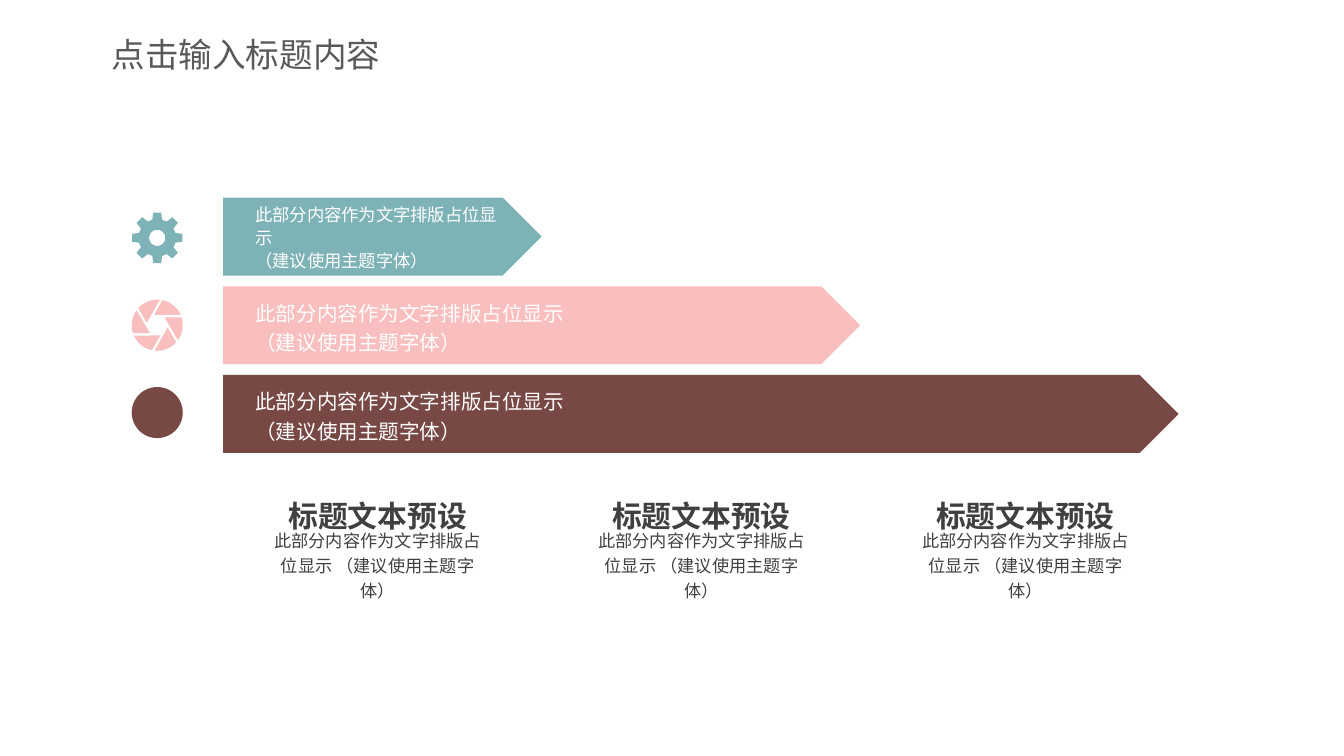
from math import cos, sin, radians
from pptx import Presentation
from pptx.dml.color import RGBColor
from pptx.enum.shapes import MSO_SHAPE as Shape
from pptx.enum.text import MSO_ANCHOR as Anchor, MSO_AUTO_SIZE as Auto, PP_ALIGN as Align
from pptx.util import Inches, Pt

TITLE = "点击输入标题内容"
BAR = "此部分内容作为文字排版占位显示 \n（建议使用主题字体）"
BARS = [("7DB2B7", 9.3, 1.1), ("F8BFBE", 11, 1.2), ("784845", 11, 1.2)]
NOTES = [("标题文本预设", "此部分内容作为文字排版占位显示 （建议使用主题字体）")] * 3

WIDE = 10
LEFT, TOP, STEP, HIGH, UNIT = 1.66, 1.47, 0.66, 0.58, 2.37
MID, ICON_TOP, ICON_STEP, RAD = 1.17, 1.77, 0.65, 0.19
NOTE_LEFT, NOTE_STEP, NOTE_WIDE = 2, 2.41, 1.62


def box(x, y, w, h):
    return [Inches(v) for v in (x, y, w, h)]


def paint(shape, color):
    shape.shadow.inherit = False
    shape.fill.solid()
    shape.fill.fore_color.rgb = RGBColor.from_string(color)
    shape.line.fill.background()


def write(shape, text, size, color, font="Calibri", bold=False, align=Align.LEFT,
          anchor=Anchor.MIDDLE, space=1.0, inset=(0, 0, 0, 0), wrap=True):
    frame = shape.text_frame
    frame.auto_size = Auto.NONE
    frame.word_wrap = wrap
    frame.vertical_anchor = anchor
    (frame.margin_left, frame.margin_top,
     frame.margin_right, frame.margin_bottom) = box(*inset)
    para = frame.paragraphs[0]
    para.text = text
    para.alignment = align
    para.line_spacing = space
    for run in para.runs:
        run.font.name = font
        run.font.size = Pt(size)
        run.font.bold = bold
        run.font.color.rgb = RGBColor.from_string(color)


def spot(y, rad, deg):
    turn = radians(deg)
    return Inches(MID + rad * cos(turn)), Inches(y + rad * sin(turn))


def draw(shapes, loops, color):
    pen = shapes.build_freeform(*loops[0][0], scale=1.0)
    for num, loop in enumerate(loops):
        if num:
            pen.move_to(*loop[0])
        pen.add_line_segments(loop[1:], close=True)
    paint(pen.convert_to_shape(), color)


def gear(shapes, y, color):
    tooth = [(0.14, -15), (RAD, -9), (RAD, 9), (0.14, 15)]
    rim = [spot(y, rad, 45 * n + deg) for n in range(8) for rad, deg in tooth]
    hole = [spot(y, 0.06, -deg) for deg in range(0, 360, 10)]
    draw(shapes, [rim, hole], color)


def lens(shapes, y, color):
    blade = [(RAD, deg) for deg in range(-84, -139, -6)] + [(0.08, -167)]
    loops = [[spot(y, rad, deg + 60 * n) for rad, deg in blade] for n in range(6)]
    draw(shapes, loops, color)


def disc(shapes, y, color):
    paint(shapes.add_shape(Shape.OVAL, *box(MID - RAD, y - RAD, 2 * RAD, 2 * RAD)), color)


deck = Presentation()
deck.slide_width, deck.slide_height = Inches(WIDE), Inches(WIDE * 9 / 16)
slide = deck.slides.add_slide(deck.slide_layouts[5])
shapes = slide.shapes

title = shapes.title
title.left, title.top, title.width, title.height = box(0.83, 0.19, 2.33, 0.42)
write(title, TITLE, 18, "595959", font="Noto Sans CJK SC", inset=(0, 0.05, 0, 0.05))

for n, ((color, size, space), icon) in enumerate(zip(BARS, (gear, lens, disc))):
    bar = shapes.add_shape(Shape.PENTAGON, *box(LEFT, TOP + n * STEP, UNIT * (n + 1), HIGH))
    paint(bar, color)
    write(bar, BAR, size, "FFFFFF", space=space, inset=(0.24, 0.05, 0.1, 0.05))
    icon(shapes, ICON_TOP + n * ICON_STEP, color)

for n, (head, body) in enumerate(NOTES):
    x = NOTE_LEFT + n * NOTE_STEP
    write(shapes.add_textbox(*box(x, 3.7, NOTE_WIDE, 0.26)), head, 16, "404040",
          bold=True, align=Align.CENTER, anchor=Anchor.TOP, wrap=False)
    write(shapes.add_textbox(*box(x, 3.96, NOTE_WIDE, 0.47)), body, 9.2, "404040",
          align=Align.CENTER, space=1.2)

deck.save("out.pptx")
